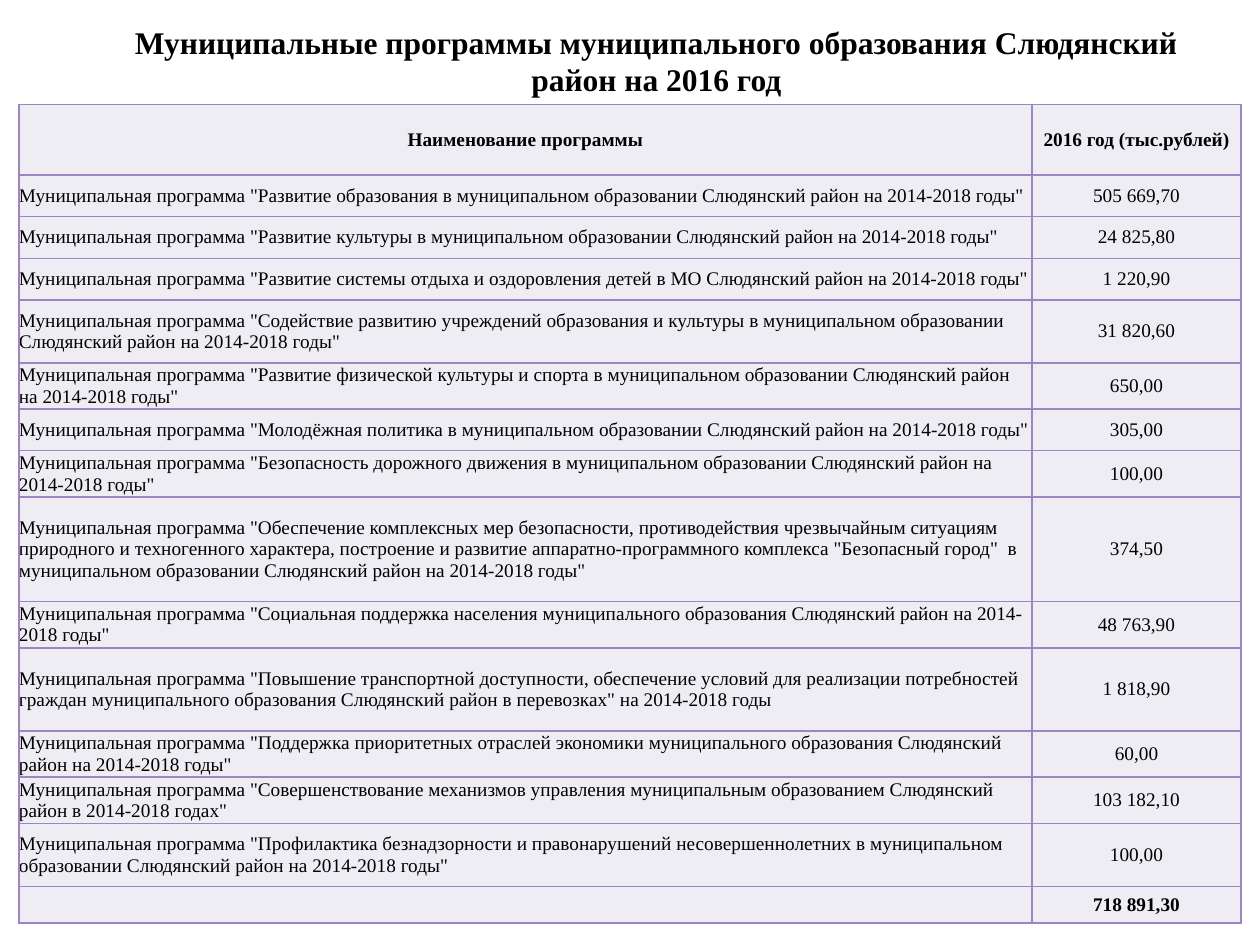
from lxml import etree
from pptx import Presentation
from pptx import util as u
from pptx.dml.color import RGBColor
from pptx.enum import text
from pptx.oxml import ns

TITLE = "Муниципальные программы муниципального образования Слюдянский район на 2016 год"
HEADINGS = ("Наименование программы", "2016 год (тыс.рублей)")
PREFIX = "Муниципальная программа "
PROGRAMMES = [
    ('"Развитие образования в муниципальном образовании Слюдянский район на 2014-2018 годы"', "505 669,70", 0.33),
    ('"Развитие культуры в муниципальном образовании Слюдянский район на 2014-2018 годы"', "24 825,80", 0.33),
    ('"Развитие системы отдыха и оздоровления детей в МО Слюдянский район на 2014-2018 годы"', "1 220,90", 0.33),
    ('"Содействие развитию учреждений образования и культуры в муниципальном образовании '
     'Слюдянский район на 2014-2018 годы"', "31 820,60", 0.5),
    ('"Развитие физической культуры и спорта в муниципальном образовании Слюдянский район '
     'на 2014-2018 годы"', "650,00", 0.33),
    ('"Молодёжная политика в муниципальном образовании Слюдянский район на 2014-2018 годы"', "305,00", 0.33),
    ('"Безопасность дорожного движения в муниципальном образовании Слюдянский район на '
     '2014-2018 годы"', "100,00", 0.33),
    ('"Обеспечение комплексных мер безопасности, противодействия чрезвычайным ситуациям '
     'природного и техногенного характера, построение и развитие аппаратно-программного '
     'комплекса "Безопасный город"  в муниципальном образовании Слюдянский район на '
     '2014-2018 годы"', "374,50", 0.83),
    ('"Социальная поддержка населения муниципального образования Слюдянский район на '
     '2014-2018 годы"', "48 763,90", 0.33),
    ('"Повышение транспортной доступности, обеспечение условий для реализации потребностей '
     'граждан муниципального образования Слюдянский район в перевозках" на 2014-2018 годы', "1 818,90", 0.66),
    ('"Поддержка приоритетных отраслей экономики муниципального образования Слюдянский '
     'район на 2014-2018 годы"', "60,00", 0.33),
    ('"Совершенствование механизмов управления муниципальным образованием Слюдянский '
     'район в 2014-2018 годах"', "103 182,10", 0.33),
    ('"Профилактика безнадзорности и правонарушений несовершеннолетних в муниципальном '
     'образовании Слюдянский район на 2014-2018 годы"', "100,00", 0.5),
]
TOTAL = "718 891,30"
COLORS = {"text": "000000", "cell": "EFEDF4", "border": "9C85C0"}
COLUMN_WIDTHS = (8.04, 1.66)
CELL_FORMAT = {"margin_left": 0, "margin_right": 0, "margin_top": 0, "margin_bottom": 0,
               "vertical_anchor": text.MSO_ANCHOR.MIDDLE}


def apply(target, values):
    for name, value in values.items():
        setattr(target, name, value)


def write(paragraph, words, size, bold, centred):
    paragraph.alignment = text.PP_ALIGN.CENTER if centred else text.PP_ALIGN.LEFT
    run = paragraph.add_run()
    run.text = words
    apply(run.font, {"name": "Times New Roman", "size": u.Pt(size), "bold": bold})
    run.font.color.rgb = RGBColor.from_string(COLORS["text"])


def add_borders(cell):
    properties = cell._tc.get_or_add_tcPr()
    for position, side in enumerate(("lnL", "lnR", "lnT", "lnB")):
        line = etree.Element(ns.qn("a:" + side), w=str(u.Pt(1)))
        fill = etree.SubElement(line, ns.qn("a:solidFill"))
        etree.SubElement(fill, ns.qn("a:srgbClr"), val=COLORS["border"])
        properties.insert(position, line)


def add_title(slide):
    frame = slide.shapes.add_textbox(*map(u.Inches, (0.66, 0.13, 9.1, 0.71))).text_frame
    frame.word_wrap = True
    write(frame.paragraphs[0], TITLE, 18, True, True)


def add_programmes(slide):
    rows = [(*HEADINGS, 0.56)]
    rows += [(PREFIX + name, amount, height) for name, amount, height in PROGRAMMES]
    rows.append(("", TOTAL, 0.29))
    place = (0.15, 0.83, sum(COLUMN_WIDTHS), sum(row[2] for row in rows))
    table = slide.shapes.add_table(len(rows), 2, *map(u.Inches, place)).table
    for column, width in zip(table.columns, COLUMN_WIDTHS):
        column.width = u.Inches(width)
    for r, (name, amount, height) in enumerate(rows):
        table.rows[r].height = u.Inches(height)
        heading, total = r == 0, r == len(rows) - 1
        for c, words in enumerate((name, amount)):
            cell = table.cell(r, c)
            apply(cell, CELL_FORMAT)
            cell.fill.solid()
            cell.fill.fore_color.rgb = RGBColor.from_string(COLORS["cell"])
            add_borders(cell)
            paragraph = cell.text_frame.paragraphs[0]
            if words:
                write(paragraph, words, 11, heading or total, heading or c == 1)
            else:
                etree.SubElement(paragraph._p, ns.qn("a:endParaRPr"), sz="1100")


def main():
    deck = Presentation()
    apply(deck, {"slide_width": u.Inches(10), "slide_height": u.Inches(7.5)})
    slide = deck.slides.add_slide(deck.slide_layouts[6])
    add_title(slide)
    add_programmes(slide)
    deck.save("out.pptx")


if __name__ == "__main__":
    main()
